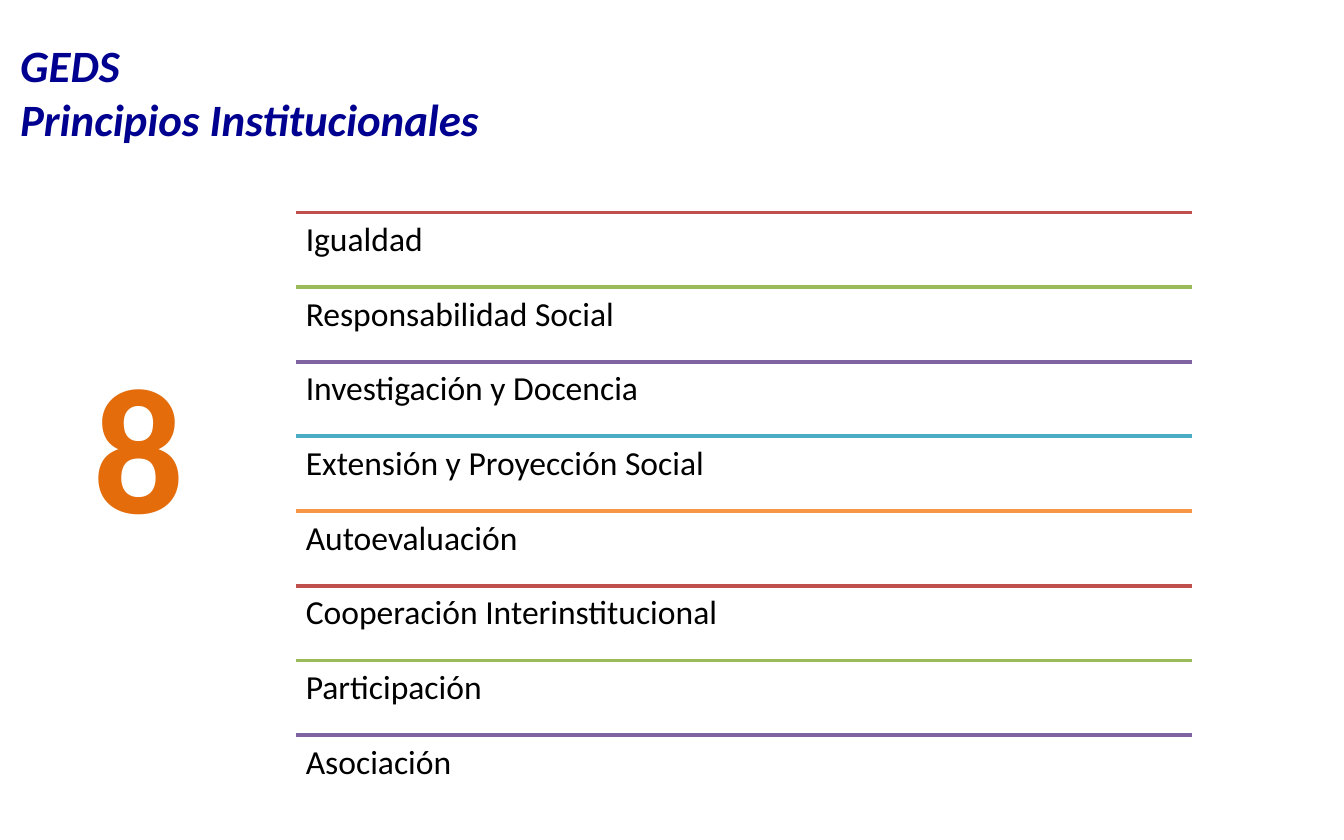
from dataclasses import dataclass
from itertools import cycle

from lxml.etree import SubElement
from pptx import Presentation
from pptx.dml.color import RGBColor
from pptx.enum.shapes import MSO_CONNECTOR
from pptx.enum.text import MSO_ANCHOR, PP_ALIGN
from pptx.oxml.ns import qn
from pptx.slide import Slide
from pptx.util import Pt

FONT = "Calibri"
LIST_LEFT, LIST_TOP = 158.4, 113.8
ROW_WIDTH, ROW_HEIGHT = 480, 40
ROW_INSET = 5.4
PRINCIPLES = [
    "Igualdad",
    "Responsabilidad Social",
    "Investigación y Docencia",
    "Extensión y Proyección Social",
    "Autoevaluación",
    "Cooperación Interinstitucional",
    "Participación",
    "Asociación",
]
RULE_COLORS = ["C0504D", "9BBB59", "8064A2", "4BACC6", "F79646"]


@dataclass
class Principle:
    name: str
    rule_color: str
    top: float


def rgb(hex_color: str) -> RGBColor:
    return RGBColor.from_string(hex_color)


def style(paragraph, size: float, color: str, bold: bool = False, italic: bool = False) -> None:
    font = paragraph.font
    font.name, font.size = FONT, Pt(size)
    font.bold, font.italic = bold, italic
    font.color.rgb = rgb(color)


def add_title(slide: Slide) -> None:
    title = slide.shapes.title
    title.left, title.top, title.width, title.height = Pt(3.6), Pt(16.6), Pt(462), Pt(26.6)
    frame = title.text_frame
    frame.text = "GEDS\vPrincipios Institucionales"
    frame.vertical_anchor = MSO_ANCHOR.TOP
    heading = frame.paragraphs[0]
    heading.alignment = PP_ALIGN.LEFT
    style(heading, 24, "000090", bold=True, italic=True)


def add_principle(slide: Slide, principle: Principle) -> None:
    """Draw a coloured rule with the principle's name below it."""
    top = Pt(principle.top)
    rule = slide.shapes.add_connector(
        MSO_CONNECTOR.STRAIGHT, Pt(LIST_LEFT), top, Pt(LIST_LEFT + ROW_WIDTH), top
    )
    rule.line.color.rgb = rgb(principle.rule_color)
    rule.line.width = Pt(2)
    SubElement(rule.element.spPr, qn("a:effectLst"))

    label = slide.shapes.add_textbox(Pt(LIST_LEFT), top, Pt(ROW_WIDTH), Pt(ROW_HEIGHT))
    frame = label.text_frame
    frame.word_wrap = True
    frame.margin_left = frame.margin_right = Pt(ROW_INSET)
    frame.margin_top = frame.margin_bottom = Pt(ROW_INSET)
    frame.text = principle.name
    frame.paragraphs[0].line_spacing = 0.9
    style(frame.paragraphs[0], 18, "000000")


def add_count(slide: Slide, count: int) -> None:
    number = slide.shapes.add_textbox(Pt(43.2), Pt(175.7), Pt(63.4), Pt(123.8))
    frame = number.text_frame
    frame.word_wrap = False
    frame.text = str(count)
    style(frame.paragraphs[0], 96, "E46C0A", bold=True)


def main() -> None:
    presentation = Presentation()
    presentation.slide_width, presentation.slide_height = Pt(720), Pt(450)
    slide = presentation.slides.add_slide(presentation.slide_layouts[5])
    add_title(slide)
    for row, (name, color) in enumerate(zip(PRINCIPLES, cycle(RULE_COLORS))):
        add_principle(slide, Principle(name, color, LIST_TOP + row * ROW_HEIGHT))
    add_count(slide, len(PRINCIPLES))
    presentation.save("out.pptx")


if __name__ == "__main__":
    main()
